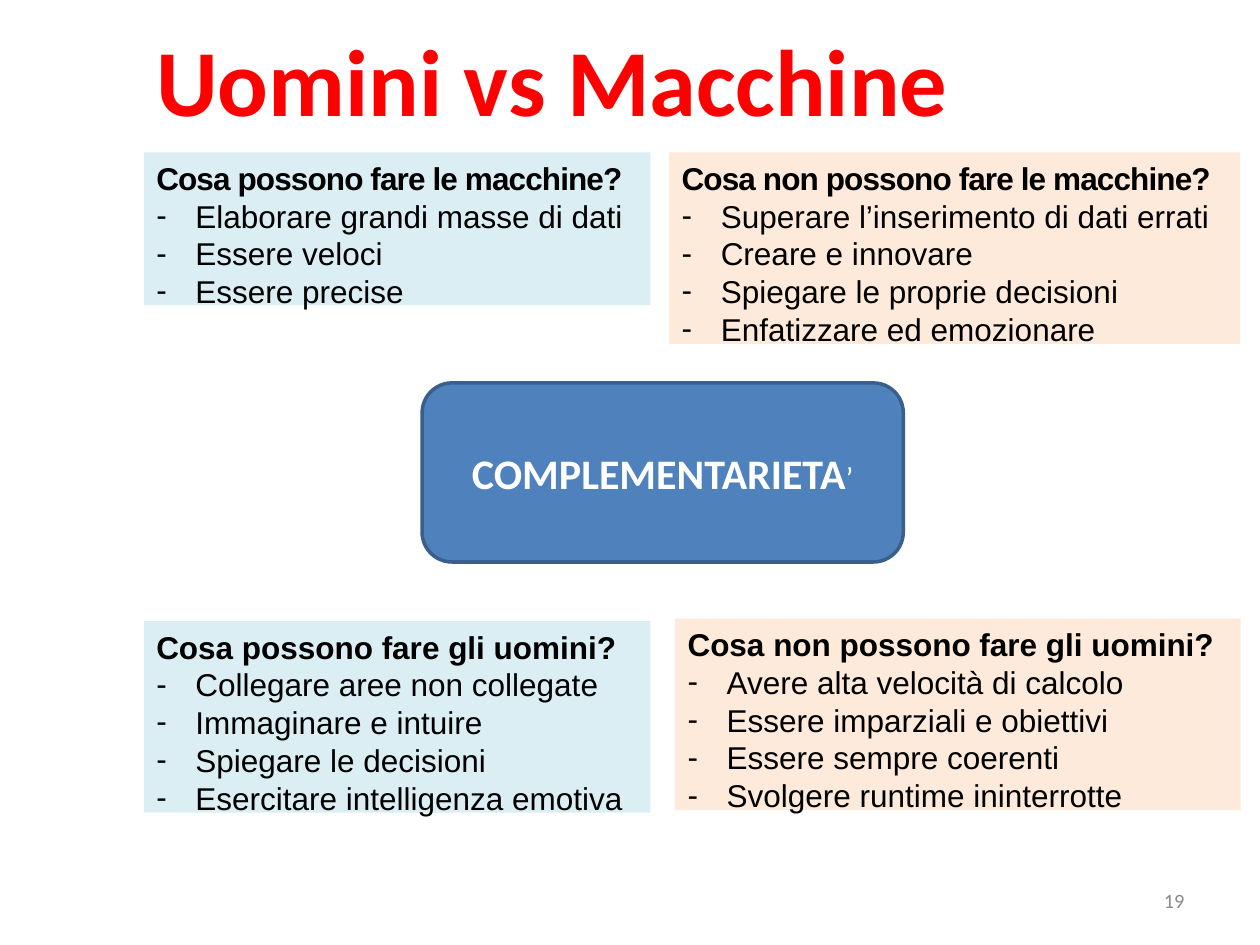
from dataclasses import dataclass

from lxml import etree
from pptx import Presentation
from pptx.dml.color import RGBColor
from pptx.enum.shapes import MSO_SHAPE
from pptx.enum.text import MSO_ANCHOR, MSO_AUTO_SIZE, PP_ALIGN
from pptx.oxml.ns import qn
from pptx.util import Cm, Pt

ROUNDED = MSO_SHAPE.ROUNDED_RECTANGLE
TOP, MIDDLE = MSO_ANCHOR.TOP, MSO_ANCHOR.MIDDLE
NO_FIT, GROW = MSO_AUTO_SIZE.NONE, MSO_AUTO_SIZE.SHAPE_TO_FIT_TEXT
LEFT, CENTER, RIGHT = PP_ALIGN.LEFT, PP_ALIGN.CENTER, PP_ALIGN.RIGHT


@dataclass(frozen=True)
class Theme:
    red: str = "FF0000"
    black: str = "000000"
    white: str = "FFFFFF"
    grey: str = "898989"
    can: str = "DBEEF4"
    cannot: str = "FDEADA"
    accent: str = "4F81BD"
    border: str = "3A5F8C"
    heading_font: str = "Calibri"
    list_font: str = "Arial"
    title: float = 54
    center: float = 24
    body: float = 18
    number: float = 11.6


theme = Theme()


def place(sp, box, anchor, fit):
    sp.left, sp.top, sp.width, sp.height = (Cm(v) for v in box)
    tf = sp.text_frame
    frame_format = {
        "word_wrap": True, "auto_size": fit, "vertical_anchor": anchor,
        "margin_left": Cm(0.25), "margin_right": Cm(0.25),
        "margin_top": Cm(0.13), "margin_bottom": Cm(0.13),
    }
    for name, value in frame_format.items():
        setattr(tf, name, value)
    return tf


def add_run(p, text, name, size, color, bold=False, align=LEFT):
    p.alignment = align
    r = p.add_run()
    r.text = text
    for key, value in {"name": name, "size": Pt(size), "bold": bold}.items():
        setattr(r.font, key, value)
    r.font.color.rgb = RGBColor.from_string(color)
    return r


prs = Presentation()
prs.slide_width, prs.slide_height = Cm(25.4), Cm(19.05)
s = prs.slides.add_slide(prs.slide_layouts.get_by_name("Comparison"))
title, *bodies = s.placeholders

tf = place(title, (2.9, 0, 21.44, 3.18), MIDDLE, NO_FIT)
add_run(tf.paragraphs[0], "Uomini vs Macchine", theme.heading_font, theme.title, theme.red, True)

sp = s.shapes.add_textbox(0, 0, 0, 0)
tf = place(sp, (18.21, 17.65, 5.92, 1.02), MIDDLE, NO_FIT)
add_run(tf.paragraphs[0], "19", theme.heading_font, theme.number, theme.grey, align=RIGHT)

panels = [
    ((2.9, 3.07, 10.21, 3.33), theme.can, -50, "Cosa possono fare le macchine?",
     ["Elaborare grandi masse di dati", "Essere veloci", "Essere precise"]),
    ((13.49, 3.07, 11.51, 4.11), theme.cannot, -50, "Cosa non possono fare le macchine?",
     ["Superare l’inserimento di dati errati", "Creare e innovare",
      "Spiegare le proprie decisioni", "Enfatizzare ed emozionare"]),
    ((2.9, 12.52, 10.21, 4.11), theme.can, 0, "Cosa possono fare gli uomini?",
     ["Collegare aree non collegate", "Immaginare e intuire",
      "Spiegare le decisioni", "Esercitare intelligenza emotiva"]),
    ((13.61, 12.47, 11.4, 4.11), theme.cannot, 0, "Cosa non possono fare gli uomini?",
     ["Avere alta velocità di calcolo", "Essere imparziali e obiettivi",
      "Essere sempre coerenti", "Svolgere runtime ininterrotte"]),
]
for sp, (box, fill, spacing, heading, items) in zip(bodies, panels):
    tf = place(sp, box, TOP, GROW)
    sp.fill.solid()
    sp.fill.fore_color.rgb = RGBColor.from_string(fill)
    for i, text in enumerate([heading] + items):
        is_heading = i == 0
        p = tf.paragraphs[0] if is_heading else tf.add_paragraph()
        indent = 0 if is_heading else Cm(0.79)
        pPr = p._p.get_or_add_pPr()
        pPr.set("marL", str(indent))
        pPr.set("indent", str(-indent))
        if is_heading:
            etree.SubElement(pPr, qn("a:buNone"))
        else:
            etree.SubElement(pPr, qn("a:buFontTx"))
            etree.SubElement(pPr, qn("a:buChar"), char="-")
        p.space_before = Pt(0)
        r = add_run(p, text, theme.list_font, theme.body, theme.black, is_heading)
        if is_heading:
            r.font._element.set("spc", str(spacing))

sp = s.shapes.add_shape(ROUNDED, 0, 0, 0, 0)
tf = place(sp, (8.51, 7.72, 9.7, 3.61), MIDDLE, NO_FIT)
sp.shadow.inherit = False
sp.fill.solid()
sp.fill.fore_color.rgb = RGBColor.from_string(theme.accent)
sp.line.color.rgb = RGBColor.from_string(theme.border)
sp.line.width = Pt(2)
p = tf.paragraphs[0]
for text, size, bold in (("COMPLEMENTARIETA", theme.center, True), ("’", theme.body, False)):
    add_run(p, text, theme.heading_font, size, theme.white, bold, CENTER)

prs.save("out.pptx")
